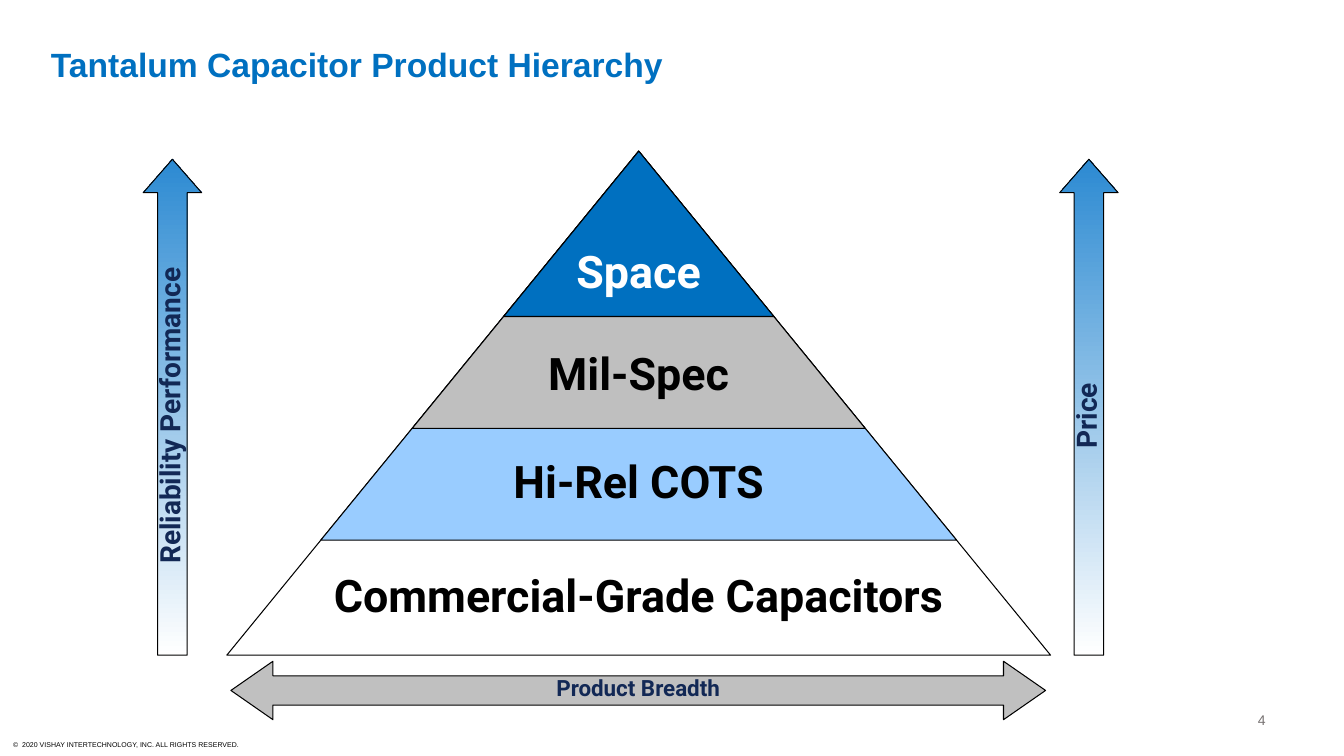
from pptx import Presentation
from pptx.dml.color import RGBColor
from pptx.enum.shapes import MSO_SHAPE
from pptx.enum.text import MSO_ANCHOR, MSO_AUTO_SIZE, PP_ALIGN
from pptx.util import Inches, Pt

TRIANGLE = MSO_SHAPE.ISOSCELES_TRIANGLE
RIGHT_ARROW = MSO_SHAPE.RIGHT_ARROW
DOUBLE_ARROW = MSO_SHAPE.LEFT_RIGHT_ARROW
TOP, MIDDLE, BOTTOM = MSO_ANCHOR.TOP, MSO_ANCHOR.MIDDLE, MSO_ANCHOR.BOTTOM
LEFT, CENTER, RIGHT = PP_ALIGN.LEFT, PP_ALIGN.CENTER, PP_ALIGN.RIGHT
NO_FIT, GROW = MSO_AUTO_SIZE.NONE, MSO_AUTO_SIZE.SHAPE_TO_FIT_TEXT

BLACK, WHITE, NAVY, BLUE = "000000", "FFFFFF", "122855", "0070C0"
TIER_LABEL = {"size": Pt(32), "name": "Roboto", "bold": True}
AXIS_LABEL = {"size": Pt(20), "name": "Roboto", "bold": True}

TIERS = [
    ("Commercial-Grade Capacitors", 5, 4.19, 6.65, WHITE),
    ("Hi-Rel COTS", 3.86, 3.05, 2.87, "99CCFF"),
    ("Mil-Spec", 2.75, 1.98, 2.04, "BFBFBF"),
]
PEAK_HEIGHT = 1.64


def rgb(value):
    return RGBColor.from_string(value)


def inches(*box):
    return [Inches(length) for length in box]


def write(holder, words, color, font, align=CENTER, spacing=0.8, **frame_format):
    frame = holder.text_frame
    frame.text = words
    for key, value in frame_format.items():
        setattr(frame, key, value)
    paragraph = frame.paragraphs[0]
    paragraph.alignment = align
    paragraph.line_spacing = spacing
    for key, value in font.items():
        setattr(paragraph.runs[0].font, key, value)
    paragraph.runs[0].font.color.rgb = rgb(color)


def add_text(slide, box, words, color, font, **text_format):
    write(slide.shapes.add_textbox(*inches(*box)), words, color, font, **text_format)


def add_outlined(slide, preset, box, fill=None):
    outlined = slide.shapes.add_shape(preset, *inches(*box))
    outlined.shadow.inherit = False
    outlined.line.color.rgb = rgb(BLACK)
    outlined.line.width = Pt(0.75)
    if fill:
        outlined.fill.solid()
        outlined.fill.fore_color.rgb = rgb(fill)
    return outlined


def add_title(slide, box):
    title = slide.shapes.title
    title.left, title.top, title.width, title.height = inches(*box)
    write(title, "Tantalum Capacitor Product Hierarchy", BLUE,
          {"size": Pt(24), "name": "Arial", "bold": True},
          vertical_anchor=MIDDLE, word_wrap=True, auto_size=NO_FIT)


def add_pyramid(slide, box):
    left, top, width, height = box
    center = left + width / 2

    def add_tier(tier_height, fill):
        tier_width = width * tier_height / height
        return add_outlined(slide, TRIANGLE,
                            (center - tier_width / 2, top, tier_width, tier_height), fill)

    for name, tier_height, label_offset, label_width, fill in TIERS:
        add_tier(tier_height, fill)
        add_text(slide, (center - label_width / 2, top + label_offset, label_width, 0.55),
                 name, BLACK, TIER_LABEL,
                 vertical_anchor=TOP, word_wrap=False, auto_size=GROW)
    write(add_tier(PEAK_HEIGHT, BLUE), "Space", WHITE, TIER_LABEL,
          vertical_anchor=MIDDLE, word_wrap=False)


def add_rising_arrow(slide, box, words):
    left, top, width, height = box
    turned = (left + (width - height) / 2, top + (height - width) / 2, height, width)
    arrow = add_outlined(slide, RIGHT_ARROW, turned)
    arrow.rotation = 270
    arrow.adjustments[0], arrow.adjustments[1] = 0.506, 0.572
    arrow.fill.gradient()
    arrow.fill.gradient_angle = 0
    for stop, color in zip(arrow.fill.gradient_stops, (WHITE, "2C8AD2")):
        stop.color.rgb = rgb(color)
    write(arrow, words, NAVY, AXIS_LABEL, vertical_anchor=MIDDLE, word_wrap=False)


def add_breadth_arrow(slide, box):
    arrow = add_outlined(slide, DOUBLE_ARROW, box, "C0C0C0")
    arrow.adjustments[0], arrow.adjustments[1] = 0.5, 0.719
    write(arrow, "Product Breadth", NAVY, {**AXIS_LABEL, "size": Pt(16)},
          vertical_anchor=MIDDLE, word_wrap=False)


def add_footer(slide, box):
    left, top, width, height = box
    add_text(slide, (left, top + 0.18, 3.2, 0.25),
             "©  2020 VISHAY INTERTECHNOLOGY, INC. ALL RIGHTS RESERVED.",
             BLACK, {"size": Pt(5), "name": "Arial"}, align=LEFT, spacing=1.0,
             vertical_anchor=BOTTOM, word_wrap=True,
             margin_left=Inches(0.13), margin_right=Inches(0.13),
             margin_top=Inches(0.06), margin_bottom=Inches(0.06))
    add_text(slide, (left + width - 0.86, top, 0.86, 0.2), "4", "767171",
             {"size": Pt(10), "name": "Arial"}, align=RIGHT, spacing=1.0,
             vertical_anchor=MIDDLE, word_wrap=True)


def main():
    deck = Presentation()
    deck.slide_width, deck.slide_height = inches(13.33, 7.5)
    slide = deck.slides.add_slide(deck.slide_layouts.get_by_name("Title Only"))
    add_title(slide, (0, 0.42, 7.08, 0.5))
    add_pyramid(slide, (2.25, 1.5, 8.17, 5))
    for left, words in ((1.42, "Reliability Performance"), (10.51, "Price")):
        add_rising_arrow(slide, (left, 1.58, 0.58, 4.92), words)
    add_breadth_arrow(slide, (2.29, 6.56, 8.08, 0.58))
    add_footer(slide, (0, 7.04, 12.65, 0.43))
    deck.save("out.pptx")


if __name__ == "__main__":
    main()
